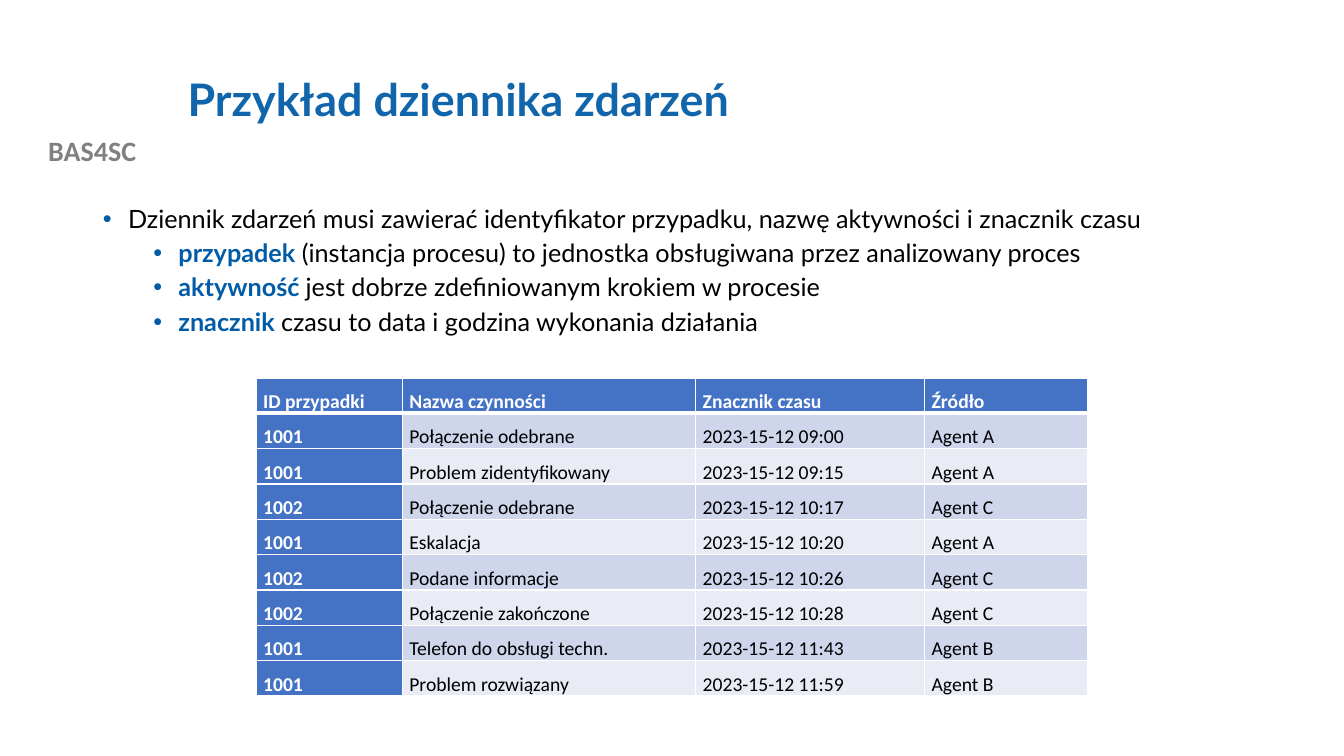
from lxml.etree import SubElement
from pptx import Presentation
from pptx.dml.color import RGBColor
from pptx.enum.text import MSO_ANCHOR, MSO_AUTO_SIZE, PP_ALIGN
from pptx.oxml.ns import qn
from pptx.util import Inches, Pt

COLORS = {
    "title": "1065AB",
    "accent": "015BA6",
    "label": "808080",
    "header": "4472C4",
    "odd": "CFD5EA",
    "even": "E9EBF5",
    "white": "FFFFFF",
    "black": "000000",
}

BULLETS = [
    (0, "", "Dziennik zdarzeń musi zawierać identyfikator przypadku, "
            "nazwę aktywności i znacznik czasu"),
    (1, "przypadek", " (instancja procesu) to jednostka obsługiwana przez analizowany proces"),
    (1, "aktywność ", "jest dobrze zdefiniowanym krokiem w procesie"),
    (1, "znacznik ", "czasu to data i godzina wykonania działania"),
]

COLUMN_WIDTHS = [1.45, 2.91, 2.27, 1.62]
ROW_HEIGHT = 0.35
EVENT_LOG = [
    ("ID przypadki", "Nazwa czynności", "Znacznik czasu", "Źródło"),
    ("1001", "Połączenie odebrane", "2023-15-12 09:00", "Agent A"),
    ("1001", "Problem zidentyfikowany", "2023-15-12 09:15", "Agent A"),
    ("1002", "Połączenie odebrane", "2023-15-12 10:17", "Agent C"),
    ("1001", "Eskalacja", "2023-15-12 10:20", "Agent A"),
    ("1002", "Podane informacje", "2023-15-12 10:26", "Agent C"),
    ("1002", "Połączenie zakończone", "2023-15-12 10:28", "Agent C"),
    ("1001", "Telefon do obsługi techn.", "2023-15-12 11:43", "Agent B"),
    ("1001", "Problem rozwiązany", "2023-15-12 11:59", "Agent B"),
]


def write(paragraph, text, size=18, font="Lato", color="black", bold=False):
    run = paragraph.add_run()
    run.text = text
    run.font.size = Pt(size)
    run.font.name = font
    run.font.bold = bold
    run.font.color.rgb = RGBColor.from_string(COLORS[color])


def place(shape, left, top, width, height):
    shape.left, shape.top = Inches(left), Inches(top)
    shape.width, shape.height = Inches(width), Inches(height)


def add_label(slide):
    label = slide.shapes.add_textbox(Inches(0), Inches(1.28), Inches(1.83), Inches(0.44))
    label.text_frame.word_wrap = True
    paragraph = label.text_frame.paragraphs[0]
    paragraph.alignment = PP_ALIGN.CENTER
    write(paragraph, "BAS4SC", size=20, font="Calibri", color="label", bold=True)


def fill_title(title):
    place(title, 1.76, 0.4, 10.66, 1.22)
    title.text_frame.auto_size = MSO_AUTO_SIZE.NONE
    title.text_frame.vertical_anchor = MSO_ANCHOR.MIDDLE
    paragraph = title.text_frame.paragraphs[0]
    paragraph.alignment = PP_ALIGN.LEFT
    paragraph.line_spacing = 0.9
    write(paragraph, "Przykład dziennika zdarzeń", size=32, color="title", bold=True)


def set_bullet(paragraph, indent):
    properties = paragraph._p.get_or_add_pPr()
    properties.set("marL", str(Inches(indent)))
    properties.set("indent", str(Inches(-0.25)))
    bullet_color = SubElement(properties, qn("a:buClr"))
    SubElement(bullet_color, qn("a:srgbClr"), val=COLORS["accent"])
    SubElement(properties, qn("a:buChar"), char="•")


def fill_bullets(body):
    place(body, 0.92, 2, 11.5, 4.76)
    frame = body.text_frame
    frame.auto_size = MSO_AUTO_SIZE.NONE
    for index, (level, term, text) in enumerate(BULLETS):
        paragraph = frame.add_paragraph() if index else frame.paragraphs[0]
        paragraph.level = level
        set_bullet(paragraph, 0.25 + 0.5 * level)
        paragraph.line_spacing = 0.9
        paragraph.space_before = Pt(5 if index else 0)
        if term:
            write(paragraph, term, color="accent", bold=True)
        write(paragraph, text)


def set_borders(cell, top, bottom):
    properties = cell._tc.get_or_add_tcPr()
    for side, width in (("L", 1), ("R", 1), ("T", top), ("B", bottom)):
        line = SubElement(properties, qn(f"a:ln{side}"), w=str(Pt(width)))
        solid = SubElement(line, qn("a:solidFill"))
        SubElement(solid, qn("a:srgbClr"), val=COLORS["white"])


def fill_cell(cell, text, row, column):
    is_header = row == 0
    is_strong = is_header or column == 0
    set_borders(cell, top=3 if row == 1 else 1, bottom=3 if is_header else 1)
    cell.fill.solid()
    fill = "header" if is_strong else ("odd" if row % 2 else "even")
    cell.fill.fore_color.rgb = RGBColor.from_string(COLORS[fill])
    cell.margin_left = cell.margin_right = Inches(0.07)
    cell.margin_top = cell.margin_bottom = Inches(0)
    cell.vertical_anchor = MSO_ANCHOR.MIDDLE if is_header else MSO_ANCHOR.TOP
    paragraph = cell.text_frame.paragraphs[0]
    paragraph.alignment = PP_ALIGN.LEFT if is_header else PP_ALIGN.JUSTIFY
    paragraph.line_spacing = 1.5
    paragraph.space_after = Pt(6)
    write(paragraph, text, size=14, font="Calibri",
          color="white" if is_strong else "black", bold=is_strong)


def add_event_log(slide):
    row_count = len(EVENT_LOG)
    event_log = slide.shapes.add_table(
        row_count, len(COLUMN_WIDTHS), Inches(2.54), Inches(3.75),
        Inches(sum(COLUMN_WIDTHS)), Inches(ROW_HEIGHT * row_count)).table
    event_log.first_col = True
    for column, width in zip(event_log.columns, COLUMN_WIDTHS):
        column.width = Inches(width)
    for row, values in enumerate(EVENT_LOG):
        for column, text in enumerate(values):
            fill_cell(event_log.cell(row, column), text, row, column)


def main():
    presentation = Presentation()
    presentation.slide_width = Inches(13.33)
    presentation.slide_height = Inches(7.5)
    slide = presentation.slides.add_slide(presentation.slide_layouts[1])
    fill_title(slide.shapes.title)
    fill_bullets(slide.placeholders[1])
    add_label(slide)
    add_event_log(slide)
    presentation.save("out.pptx")


if __name__ == "__main__":
    main()
